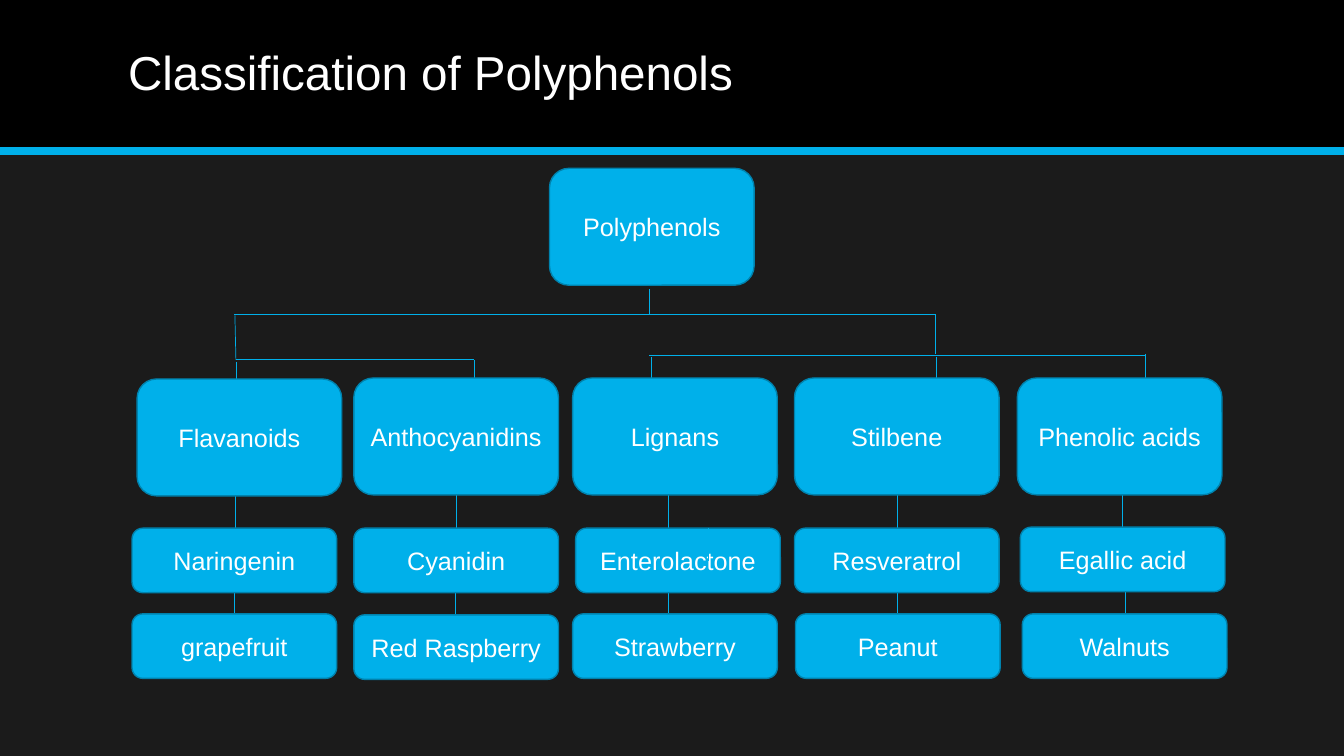
from pptx import Presentation
from pptx.dml.color import RGBColor
from pptx.enum.shapes import MSO_CONNECTOR as Connector, MSO_SHAPE as Shape
from pptx.enum.text import MSO_ANCHOR as Anchor, PP_ALIGN as Align
from pptx.oxml.ns import qn
from pptx.util import Inches, Pt
from lxml.etree import SubElement

BLACK = RGBColor(0x00, 0x00, 0x00)
CHARCOAL = RGBColor(0x1B, 0x1B, 0x1B)
WHITE = RGBColor(0xFF, 0xFF, 0xFF)
BLUE = RGBColor(0x00, 0xB0, 0xEA)
DARK_BLUE = RGBColor(0x00, 0x82, 0xAD)

PAGE_WIDTH, PAGE_HEIGHT = 13.33, 7.5
BAND_HEIGHT = 1.5
BOX_WIDTH, CLASS_HEIGHT, ITEM_HEIGHT = 2.03, 1.16, 0.64
STEM = 0.33
COMPOUND_STEM_TOP, SOURCE_STEM_TOP = 4.91, 5.87

# Each column: three boxes (text, left, top), then the x of its two stems
COLUMNS = [
    ([("Flavanoids", 1.36, 3.76), ("Naringenin", 1.31, 5.24),
      ("grapefruit", 1.31, 6.09)], 2.33, 2.32),
    ([("Anthocyanidins", 3.51, 3.75), ("Cyanidin", 3.51, 5.24),
      ("Red Raspberry", 3.51, 6.1)], 4.53, 4.52),
    ([("Lignans", 5.68, 3.75), ("Enterolactone", 5.71, 5.24),
      ("Strawberry", 5.68, 6.09)], 6.63, 6.63),
    ([("Stilbene", 7.88, 3.75), ("Resveratrol", 7.88, 5.24),
      ("Peanut", 7.89, 6.09)], 8.9, 8.9),
    ([("Phenolic acids", 10.09, 3.75), ("Egallic acid", 10.12, 5.23),
      ("Walnuts", 10.14, 6.09)], 11.13, 11.16),
]

# Branches above the classes: x and y of both ends
BRANCHES = [
    (6.44, 2.87, 6.44, 3.12),
    (2.32, 3.12, 9.28, 3.12),
    (2.33, 3.13, 2.34, 3.57),
    (2.34, 3.59, 2.34, 3.84),
    (2.34, 3.57, 4.7, 3.57),
    (4.7, 3.57, 4.7, 3.82),
    (9.28, 3.12, 9.28, 3.51),
    (6.44, 3.53, 11.36, 3.53),
    (6.46, 3.54, 6.46, 3.79),
    (9.29, 3.54, 9.29, 3.79),
    (11.36, 3.51, 11.36, 3.76),
]


class Chart:
    """Holds the style and the current slide."""

    font, title_size, box_size = "Arial", Pt(34), Pt(18)

    def __init__(self, page):
        self.page = page
        page.background.fill.solid()
        page.background.fill.fore_color.rgb = CHARCOAL

    def set_text(self, frame, text, size):
        frame.text = text
        frame.word_wrap = True
        frame.vertical_anchor = Anchor.MIDDLE
        para = frame.paragraphs[0]
        para.font.name, para.font.size = self.font, size
        para.font.color.rgb = WHITE
        return para

    def band(self, height):
        band = self.page.shapes.add_shape(
            Shape.RECTANGLE, 0, 0, Inches(PAGE_WIDTH), Inches(height))
        band.shadow.inherit = False
        band.fill.solid()
        band.fill.fore_color.rgb = BLACK
        band.line.fill.background()

    def title(self, text, left, top, width, height):
        title = self.page.shapes.title
        title.left, title.top = Inches(left), Inches(top)
        title.width, title.height = Inches(width), Inches(height)
        para = self.set_text(title.text_frame, text, self.title_size)
        para.alignment = Align.LEFT
        para.line_spacing = 0.9
        # Bring the title in front of the band
        title.element.getparent().append(title.element)

    def line(self, x1, y1, x2, y2, width=0.5):
        line = self.page.shapes.add_connector(
            Connector.STRAIGHT, Inches(x1), Inches(y1), Inches(x2), Inches(y2))
        line.line.color.rgb = BLUE
        line.line.width = Pt(width)
        SubElement(line.element.spPr, qn("a:effectLst"))

    def box(self, text, left, top, height):
        box = self.page.shapes.add_shape(
            Shape.ROUNDED_RECTANGLE, Inches(left), Inches(top),
            Inches(BOX_WIDTH), Inches(height))
        box.shadow.inherit = False
        box.fill.solid()
        box.fill.fore_color.rgb = BLUE
        box.line.color.rgb = DARK_BLUE
        box.line.width = Pt(1)
        para = self.set_text(box.text_frame, text, self.box_size)
        para.alignment = Align.CENTER


def main():
    deck = Presentation()
    deck.slide_width, deck.slide_height = Inches(PAGE_WIDTH), Inches(PAGE_HEIGHT)
    chart = Chart(deck.slides.add_slide(deck.slide_layouts[5]))

    # Header
    chart.band(BAND_HEIGHT)
    chart.line(0, BAND_HEIGHT, PAGE_WIDTH, BAND_HEIGHT, width=6)
    chart.title("Classification of Polyphenols", 1.17, 0.14, 11, 1.2)

    # Root and branches
    for branch in BRANCHES:
        chart.line(*branch)
    chart.box("Polyphenols", 5.45, 1.67, CLASS_HEIGHT)

    # Class, compound and food source in each column
    for boxes, compound_x, source_x in COLUMNS:
        for x, top in ((compound_x, COMPOUND_STEM_TOP), (source_x, SOURCE_STEM_TOP)):
            chart.line(x, top, x, top + STEM)
        for (text, left, top), height in zip(
                boxes, (CLASS_HEIGHT, ITEM_HEIGHT, ITEM_HEIGHT)):
            chart.box(text, left, top, height)

    # Short stroke across the Enterolactone box
    chart.line(7.03, 5.24, 7.03, 5.24 + STEM)

    deck.save("out.pptx")


if __name__ == "__main__":
    main()
